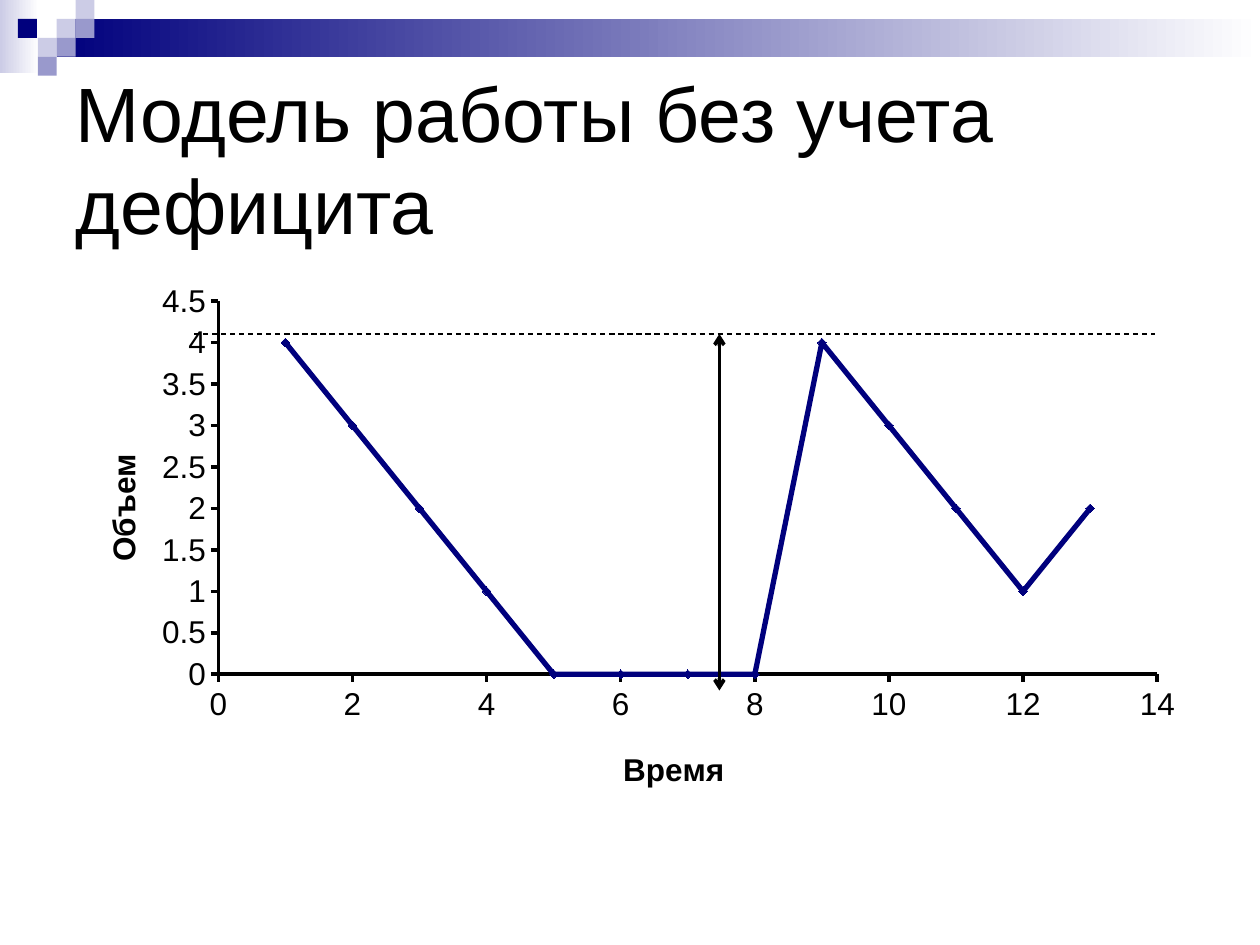
from lxml import etree
from pptx import Presentation
from pptx.chart.data import XyChartData
from pptx.dml.color import RGBColor
from pptx.enum.chart import XL_CHART_TYPE, XL_MARKER_STYLE, XL_TICK_MARK
from pptx.enum.dml import MSO_LINE
from pptx.enum.shapes import MSO_CONNECTOR, MSO_SHAPE
from pptx.enum.text import MSO_ANCHOR
from pptx.oxml.ns import qn
from pptx.util import Pt

RECTANGLE = MSO_SHAPE.RECTANGLE
STRAIGHT = MSO_CONNECTOR.STRAIGHT
SCATTER_LINES = XL_CHART_TYPE.XY_SCATTER_LINES
DIAMOND = XL_MARKER_STYLE.DIAMOND
OUTSIDE, NO_TICK = XL_TICK_MARK.OUTSIDE, XL_TICK_MARK.NONE
DASH = MSO_LINE.DASH
MIDDLE = MSO_ANCHOR.MIDDLE

FONT = "Arial"
COLORS = {"navy": "00007D", "pale": "CCCCE6", "lilac": "9999CC",
          "white": "FFFFFF", "black": "000000"}

TITLE = "Модель работы без учета дефицита"
VOLUMES = [4, 3, 2, 1, 0, 0, 0, 0, 4, 3, 2, 1, 2]
AXES = {
    "category_axis": {"title": "Время", "top": 14, "step": 2, "place": (0.489, 0.877)},
    "value_axis": {"title": "Объем", "top": 4.5, "step": 0.5, "place": (0.03, 0.327)},
}
PLOT_AREA = (0.137, 0.052, 0.828, 0.697)

BANDS = [((0, 0, 22.3, 41.8), "pale"), ((32.4, 10.8, 687.6, 21.6), "navy")]
TILE = 10.8
TILES = [(3, 1, "pale"), (4, 0, "pale"), (4, 1, "lilac"), (2, 2, "pale"),
         (0.95, 1, "navy"), (3, 2, "lilac"), (2, 3, "lilac")]
LEVEL = 190.8
LINES = [
    {"ends": (110.9, LEVEL, 660.2, LEVEL), "width": 0.75, "dash": DASH},
    {"ends": (411.1, LEVEL, 411.1, 394.6), "width": 2, "arrows": True},
]


def color(name):
    return RGBColor.from_string(COLORS[name])


def write(frame, text, size=18, bold=False):
    span = frame.paragraphs[0].add_run()
    span.text = text
    span.font.name = FONT
    span.font.size = Pt(size)
    span.font.bold = bold
    span.font.color.rgb = color("black")


def draw_line_format(line, name, width):
    line.color.rgb = color(name)
    line.width = Pt(width)


def add_box(page, place, name, fade=False):
    box = page.shapes.add_shape(RECTANGLE, *map(Pt, place))
    box.shadow.inherit = False
    box.line.fill.background()
    if fade:
        box.fill.gradient()
        box.fill.gradient_angle = 0
        for stop, shade in zip(box.fill.gradient_stops, (name, "white")):
            stop.color.rgb = color(shade)
    else:
        box.fill.solid()
        box.fill.fore_color.rgb = color(name)


def add_line(page, ends, width, dash=None, arrows=False):
    line = page.shapes.add_connector(STRAIGHT, *map(Pt, ends))
    draw_line_format(line.line, "black", width)
    if dash:
        line.line.dash_style = dash
    if arrows:
        outline = line.line._get_or_add_ln()
        for end in ("a:headEnd", "a:tailEnd"):
            etree.SubElement(outline, qn(end), type="arrow")
    etree.SubElement(line._element.spPr, qn("a:effectLst"))


def set_layout(parent, index, place, inner=False):
    for old in parent.findall(qn("c:layout")):
        parent.remove(old)
    layout = etree.Element(qn("c:layout"))
    manual = etree.SubElement(layout, qn("c:manualLayout"))
    settings = [("layoutTarget", "inner")] if inner else []
    settings += [("xMode", "edge"), ("yMode", "edge")]
    settings += zip("xywh", place)
    for tag, value in settings:
        etree.SubElement(manual, qn("c:" + tag), val=str(value))
    parent.insert(index, layout)


def format_axis(axis, title, top, step, place):
    axis.minimum_scale, axis.maximum_scale, axis.major_unit = 0, top, step
    axis.has_major_gridlines = False
    axis.major_tick_mark, axis.minor_tick_mark = OUTSIDE, NO_TICK
    axis.tick_labels.number_format = "General"
    axis.tick_labels.number_format_is_linked = False
    draw_line_format(axis.format.line, "black", 2)
    write(axis.axis_title.text_frame, title, bold=True)
    set_layout(axis.axis_title._element, 1, place)


def add_volume_chart(page):
    data = XyChartData()
    points = data.add_series("Series 1")
    for time, volume in enumerate(VOLUMES, 1):
        points.add_data_point(time, volume)
    chart = page.shapes.add_chart(SCATTER_LINES, Pt(36), Pt(156.2), Pt(648), Pt(306), data).chart
    chart.has_legend = chart.has_title = False
    chart.font.name, chart.font.size = FONT, Pt(18)
    chart.font.color.rgb = color("black")
    chart.plots[0].vary_by_categories = False
    for name, settings in AXES.items():
        format_axis(getattr(chart, name), **settings)
    set_layout(chart._chartSpace.chart.plotArea, 0, PLOT_AREA, inner=True)
    series = chart.plots[0].series[0]
    series.smooth = False
    draw_line_format(series.format.line, "navy", 3)
    series.marker.style, series.marker.size = DIAMOND, 5
    series.marker.format.fill.solid()
    series.marker.format.fill.fore_color.rgb = color("navy")
    series.marker.format.line.color.rgb = color("navy")


def main():
    deck = Presentation()
    deck.slide_width, deck.slide_height = Pt(720), Pt(540)
    page = deck.slides.add_slide(deck.slide_layouts[6])
    for place, name in BANDS:
        add_box(page, place, name, fade=True)
    for column, row, name in TILES:
        add_box(page, (column * TILE, row * TILE, TILE, TILE), name)
    frame = page.shapes.add_textbox(Pt(36), Pt(36), Pt(648), Pt(108)).text_frame
    frame.word_wrap = True
    frame.vertical_anchor = MIDDLE
    write(frame, TITLE, size=44)
    add_volume_chart(page)
    for line in LINES:
        add_line(page, **line)
    deck.save("out.pptx")


if __name__ == "__main__":
    main()
